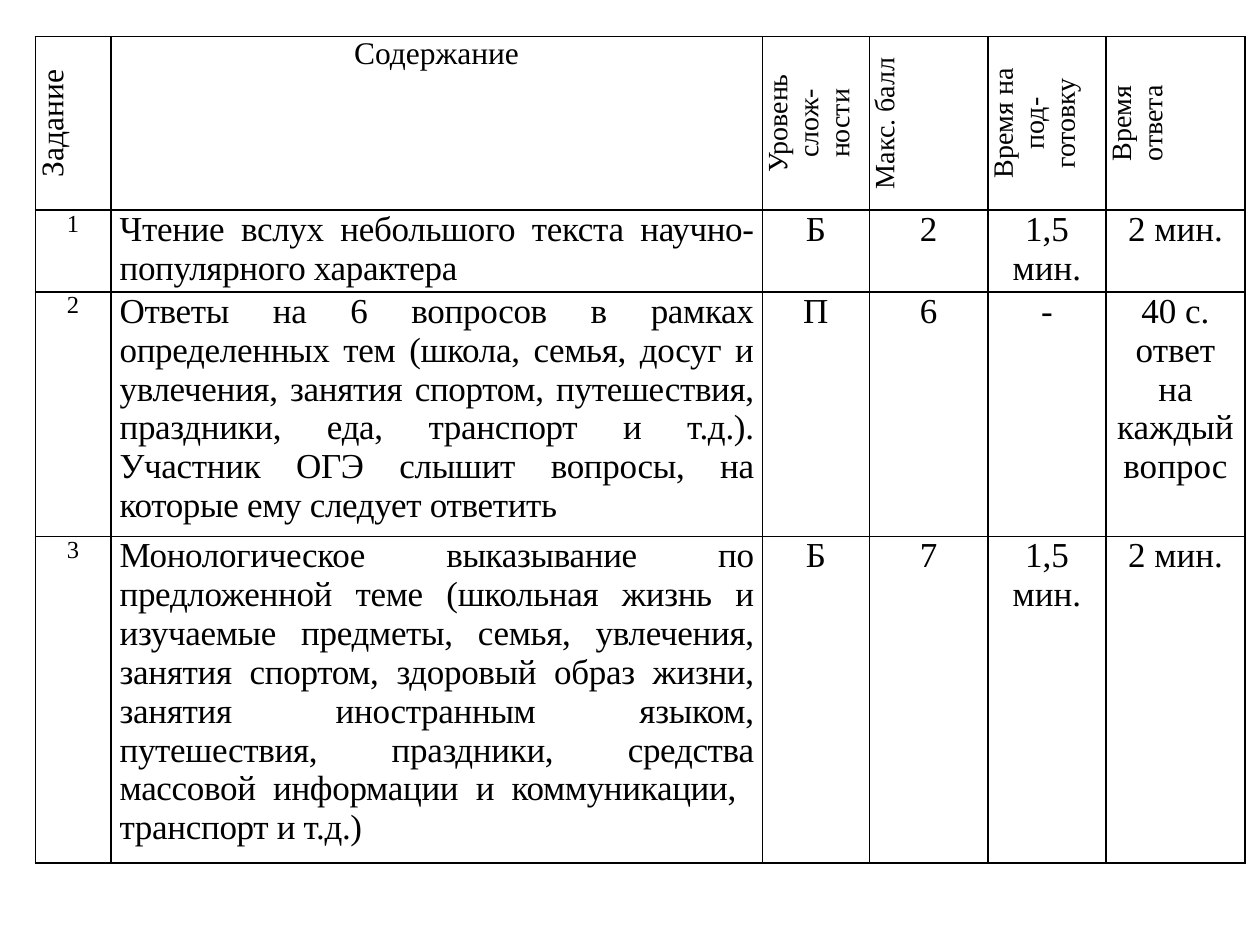
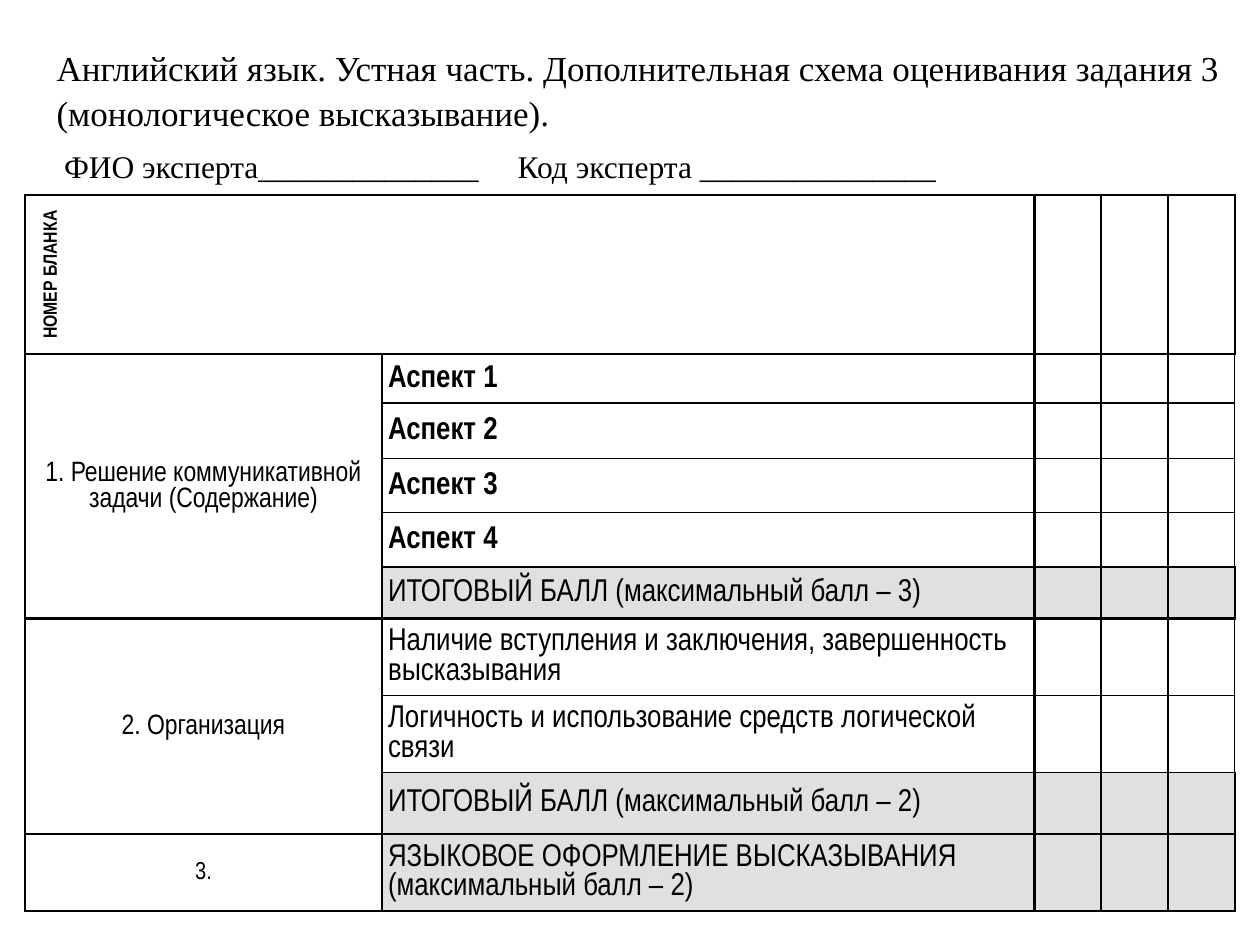
from dataclasses import dataclass
from lxml.etree import SubElement
from pptx import Presentation
from pptx.dml.color import RGBColor
from pptx.enum.text import MSO_ANCHOR, MSO_AUTO_SIZE, PP_ALIGN
from pptx.oxml import parse_xml
from pptx.oxml.ns import nsdecls, qn
from pptx.util import Inches, Pt

COLORS = {"ink": "000000", "shade": "E0E0E0"}
SERIF, NARROW = "Times New Roman", "Arial Narrow"
CENTER, LEFT, JUSTIFY = PP_ALIGN.CENTER, PP_ALIGN.LEFT, PP_ALIGN.JUSTIFY
THIN, THICK = 1, 1.5


@dataclass
class Grid:
    left: float
    top: float
    cols: list[float]
    rows: list[float]


@dataclass
class Task:
    content: str
    level: str
    score: str
    prep: str
    answer: str


@dataclass
class Point:
    text: str
    bold: bool = False
    shade: bool = False


@dataclass
class Section:
    name: str
    size: int
    points: list[Point]


TASK_GRID = Grid(0.28, 0.29, [0.6, 5.17, 0.85, 0.94, 0.94, 1.1],
                 [0.97, 0.65, 1.94, 2.59])
HEADS = [("Задание", 18), ("Содержание", 18), ("Уровень слож-\nности", 16),
         ("Макс. балл", 16), ("Время на под-\nготовку", 16),
         ("Время ответа", 16)]
TASKS = [
    Task("Чтение вслух небольшого текста научно-популярного характера",
         "Б", "2", "1,5 мин.", "2 мин."),
    Task("Ответы на 6 вопросов в рамках определенных тем (школа, семья, "
         "досуг и увлечения, занятия спортом, путешествия, праздники, еда, "
         "транспорт и т.д.). Участник ОГЭ слышит вопросы, на которые ему "
         "следует ответить", "П", "6", "-", "40 с. ответ на каждый вопрос"),
    Task("Монологическое выказывание по предложенной теме (школьная жизнь и "
         "изучаемые предметы, семья, увлечения, занятия спортом, здоровый "
         "образ жизни, занятия иностранным языком, путешествия, праздники, "
         "средства массовой информации и коммуникации, \vтранспорт и т.д.)",
         "Б", "7", "1,5 мин.", "2 мин."),
]

FORM_GRID = Grid(0.2, 1.55, [2.83, 5.18] + [0.53] * 3,
                 [1.26, 0.39, 0.44, 0.43, 0.43, 0.41, 0.43, 0.44, 0.49, 0.45])
SECTIONS = [
    Section("1. Решение коммуникативной\nзадачи (Содержание)", 16,
            [Point(f"Аспект {n}", bold=True) for n in range(1, 5)]
            + [Point("ИТОГОВЫЙ БАЛЛ (максимальный балл – 3)", shade=True)]),
    Section("2. Организация", 16, [
        Point("Наличие вступления и заключения, завершенность высказывания"),
        Point("Логичность и использование средств логической связи"),
        Point("ИТОГОВЫЙ БАЛЛ (максимальный балл – 2)", shade=True)]),
    Section("3.", 14, [
        Point("ЯЗЫКОВОЕ ОФОРМЛЕНИЕ ВЫСКАЗЫВАНИЯ (максимальный балл – 2)",
              shade=True)]),
]


def write(frame, text: str, *, size: float, font: str, align=LEFT,
          bold: bool = False, track: int = 0) -> None:
    """Fill a text frame, one paragraph a line; track is in 1/100 point."""
    for i, line in enumerate(text.split("\n")):
        para = frame.paragraphs[0] if i == 0 else frame.add_paragraph()
        para.text = line
        para.alignment = align
        for item in [para, *para.runs]:
            item.font.size = Pt(size)
            item.font.name = font
            item.font.bold = bold
            item.font.color.rgb = RGBColor.from_string(COLORS["ink"])
        for run in para.runs:
            run._r.get_or_add_rPr().set("spc", str(track))


def add_grid(slide, grid: Grid):
    table = slide.shapes.add_table(
        len(grid.rows), len(grid.cols), Inches(grid.left), Inches(grid.top),
        Inches(sum(grid.cols)), Inches(sum(grid.rows))).table
    table.first_row = table.horz_banding = False
    for col, width in zip(table.columns, grid.cols):
        col.width = Inches(width)
    for row, height in zip(table.rows, grid.rows):
        row.height = Inches(height)
    return table


def dress(cell, widths: tuple, pads: tuple, shade: bool = False) -> None:
    """Set fill, border widths (left, right, top, bottom) and insets."""
    (cell.margin_left, cell.margin_right,
     cell.margin_top, cell.margin_bottom) = map(Inches, pads)
    if shade:
        cell.fill.solid()
        cell.fill.fore_color.rgb = RGBColor.from_string(COLORS["shade"])
    else:
        cell.fill.background()
    props = cell._tc.get_or_add_tcPr()
    for i, (side, width) in enumerate(zip("LRTB", widths)):
        props.insert(i, parse_xml(
            f'<a:ln{side} {nsdecls("a")} w="{Pt(width)}"><a:solidFill>'
            f'<a:srgbClr val="{COLORS["ink"]}"/></a:solidFill></a:ln{side}>'))


def turn(cell) -> None:
    """Make the text of a cell read upwards."""
    cell._tc.get_or_add_tcPr().set("vert", "vert270")


def draw_tasks(slide) -> None:
    table = add_grid(slide, TASK_GRID)
    for cell in table.iter_cells():
        dress(cell, (THIN,) * 4, (0.07, 0.07, 0, 0))
    for c, (text, size) in enumerate(HEADS):
        cell = table.cell(0, c)
        write(cell.text_frame, text, size=size, font=SERIF, align=CENTER)
        if c != 1:
            turn(cell)
    for r, task in enumerate(TASKS, 1):
        write(table.cell(r, 0).text_frame, str(r), size=14, font=SERIF,
              align=CENTER)
        write(table.cell(r, 1).text_frame, task.content, size=20, font=SERIF,
              align=JUSTIFY, track=-20)
        facts = task.level, task.score, task.prep, task.answer
        for c, text in enumerate(facts, 2):
            write(table.cell(r, c).text_frame, text, size=20, font=SERIF,
                  align=CENTER)


def draw_intro(slide) -> None:
    frame = slide.shapes.add_textbox(Inches(0.35), Inches(0.29),
                                     Inches(9.45), Inches(1.16)).text_frame
    frame.word_wrap = True
    frame.auto_size = MSO_AUTO_SIZE.SHAPE_TO_FIT_TEXT
    write(frame, "Английский язык. Устная часть. Дополнительная схема "
          "оценивания задания 3 (монологическое высказывание).\n"
          f"ФИО эксперта{'_' * 14}\tКод эксперта {'_' * 15}",
          size=20, font=SERIF)
    title, sign = frame.paragraphs
    title.space_after = Pt(6)
    title.line_spacing = sign.line_spacing = 1.08
    for run in sign.runs:
        run.font.size = Pt(18)
    props = sign._p.get_or_add_pPr()
    props.set("marL", str(Inches(0.06)))
    tabs = SubElement(props, qn("a:tabLst"))
    SubElement(tabs, qn("a:tab"), pos=str(Inches(3.6)), algn="l")
    props.insert(props.index(props.find(qn("a:defRPr"))), tabs)


def form_edges(r: int, c: int, shade: bool) -> tuple:
    full = r in (0, len(FORM_GRID.rows) - 1)
    starts, ends = (1, 6), (5, 8)
    heavy = (full or c in (0, 2) or (shade and c > 2),
             full or c == 1 or (shade and c > 1),
             full or r in starts,
             full or r in ends or c == 0)
    return tuple(THICK if h else THIN for h in heavy)


def draw_form(slide) -> None:
    table = add_grid(slide, FORM_GRID)
    points = [Point("")] + [p for s in SECTIONS for p in s.points]
    for r, point in enumerate(points):
        for c in range(len(FORM_GRID.cols)):
            cell, shade = table.cell(r, c), point.shade and c > 0
            pad = 0.05 if c == 1 else 0.01
            dress(cell, form_edges(r, c, shade), (pad, 0.01, 0.01, 0), shade)
            cell.vertical_anchor = MSO_ANCHOR.MIDDLE
        if r:
            write(table.cell(r, 1).text_frame, point.text, size=18,
                  font=NARROW, bold=point.bold)

    head = table.cell(0, 0)
    head.merge(table.cell(0, 1))
    write(head.text_frame, "НОМЕР БЛАНКА", size=11, font=NARROW,
          align=CENTER, bold=True)
    turn(head)
    head.vertical_anchor = MSO_ANCHOR.TOP
    head.margin_top = Inches(0.14)

    row = 1
    for part in SECTIONS:
        cell, last = table.cell(row, 0), row + len(part.points) - 1
        if last > row:
            cell.merge(table.cell(last, 0))
        write(cell.text_frame, part.name, size=part.size, font=NARROW,
              align=CENTER)
        row = last + 1


def main() -> None:
    deck = Presentation()
    deck.slide_width, deck.slide_height = Inches(10), Inches(7.5)
    blank = deck.slide_layouts[6]
    draw_tasks(deck.slides.add_slide(blank))
    form = deck.slides.add_slide(blank)
    draw_intro(form)
    draw_form(form)
    deck.save("out.pptx")


if __name__ == "__main__":
    main()
